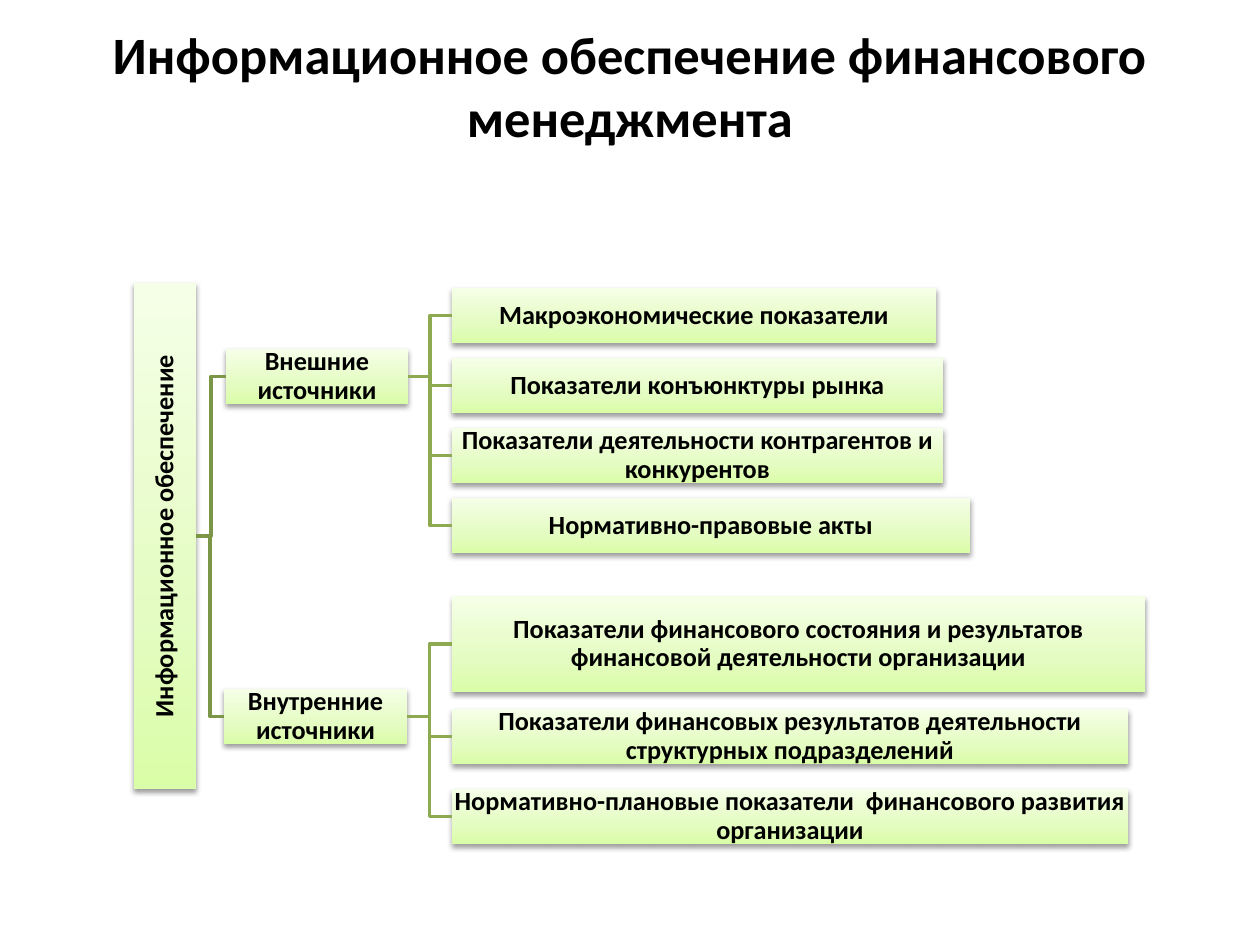
from pptx import Presentation
from pptx.dml.color import RGBColor
from pptx.enum.shapes import MSO_CONNECTOR, MSO_SHAPE
from pptx.enum.text import MSO_ANCHOR, MSO_AUTO_SIZE, PP_ALIGN
from pptx.oxml import parse_xml
from pptx.oxml.ns import nsdecls, qn
from pptx.util import Emu, Pt

BLACK = RGBColor(0x00, 0x00, 0x00)
TRUNK = RGBColor(0x7C, 0x96, 0x47)
BRANCH = RGBColor(0x8D, 0xAA, 0x51)
GRADIENT = (
    (0, RGBColor(0xDA, 0xFD, 0xA7)),
    (35, RGBColor(0xE4, 0xFC, 0xC2)),
    (100, RGBColor(0xF5, 0xFF, 0xE7)),
)
PX_PER_INCH = 126
BOX_HEIGHT = 55
LEAF_LEFT = 452
ROOT_EXIT = (196, 536)

GROUPS = (
    ("Внешние источники", (226, 349, 182, BOX_HEIGHT), (
        ("Макроэкономические показатели", 288, 484, BOX_HEIGHT),
        ("Показатели конъюнктуры рынка", 358, 491, BOX_HEIGHT),
        ("Показатели деятельности контрагентов и конкурентов", 428, 491, BOX_HEIGHT),
        ("Нормативно-правовые акты", 498, 518, BOX_HEIGHT),
    )),
    ("Внутренние источники", (224, 689, 183, BOX_HEIGHT), (
        ("Показатели финансового состояния и результатов финансовой "
         "деятельности организации", 596, 693, 96),
        ("Показатели финансовых результатов деятельности "
         "структурных подразделений", 709, 676, BOX_HEIGHT),
        ("Нормативно-плановые показатели  финансового развития организации",
         789, 676, BOX_HEIGHT),
    )),
)


def px(length):
    return Emu(round(length * 914400 / PX_PER_INCH))


def apply(target, values):
    for name, value in values.items():
        setattr(target, name, value)


class SlideBuilder:
    """Holds the style and the current slide, and draws each kind of element."""

    font = {"name": "Calibri", "bold": True}
    margins = ("margin_left", "margin_top", "margin_right", "margin_bottom")

    def __init__(self, page):
        self.page = page

    def label(self, frame, text, size, frame_format, para_format):
        frame.text = text
        apply(frame, {"word_wrap": True, "auto_size": MSO_AUTO_SIZE.NONE,
                      "vertical_anchor": MSO_ANCHOR.MIDDLE, **frame_format})
        para = frame.paragraphs[0]
        apply(para, {"alignment": PP_ALIGN.CENTER, **para_format})
        span = para.runs[0]
        apply(span.font, {**self.font, "size": Pt(size)})
        span.font.color.rgb = BLACK

    def title(self, text, bounds):
        title = self.page.shapes.title
        apply(title, dict(zip(("left", "top", "width", "height"), map(px, bounds))))
        self.label(title.text_frame, text, 30, {"margin_bottom": px(70)}, {})

    def box(self, text, bounds, rotation=0):
        box = self.page.shapes.add_shape(MSO_SHAPE.RECTANGLE, *map(px, bounds))
        box.rotation = rotation
        box.line.fill.background()
        box.shadow.inherit = False
        properties = box._element.spPr
        stops = "".join(
            f'<a:gs pos="{position * 1000}"><a:srgbClr val="{color}"/></a:gs>'
            for position, color in GRADIENT
        )
        properties.find(qn("a:prstGeom")).addnext(parse_xml(
            f'<a:gradFill {nsdecls("a")} rotWithShape="0"><a:gsLst>{stops}</a:gsLst>'
            '<a:lin ang="16200000" scaled="0"/></a:gradFill>'
        ))
        properties.find(qn("a:effectLst")).append(parse_xml(
            f'<a:outerShdw {nsdecls("a")} blurRad="{Pt(3.1)}" dist="{Pt(1.6)}" '
            'dir="5400000" rotWithShape="0"><a:srgbClr val="000000">'
            '<a:alpha val="38000"/></a:srgbClr></a:outerShdw>'
        ))
        self.label(box.text_frame, text, 15,
                   dict.fromkeys(self.margins, px(1)), {"line_spacing": 0.9})
        return box

    def elbow(self, start, target, color, source=None):
        end = (target.left, target.top + target.height // 2)
        elbow = self.page.shapes.add_connector(
            MSO_CONNECTOR.ELBOW, *map(px, start), *end)
        if source is not None:
            elbow.begin_connect(source, 3)
        elbow.end_connect(target, 1)
        elbow.line.width = Pt(2)
        elbow.line.color.rgb = color
        elbow._element.spPr.append(parse_xml(f'<a:effectLst {nsdecls("a")}/>'))


def main():
    deck = Presentation()
    apply(deck, {"slide_width": px(1260), "slide_height": px(945)})
    builder = SlideBuilder(deck.slides.add_slide(deck.slide_layouts[5]))
    builder.title("Информационное обеспечение финансового менеджмента",
                  (63, 38, 1134, 157))
    builder.box("Информационное обеспечение", (-88, 505, 506, 62), rotation=270)
    for name, bounds, leaves in GROUPS:
        group = builder.box(name, bounds)
        builder.elbow(ROOT_EXIT, group, TRUNK)
        left, top, width, height = bounds
        for text, leaf_top, leaf_width, leaf_height in leaves:
            leaf = builder.box(text, (LEAF_LEFT, leaf_top, leaf_width, leaf_height))
            builder.elbow((left + width, top + height // 2), leaf, BRANCH, group)
    deck.save("out.pptx")


if __name__ == "__main__":
    main()
